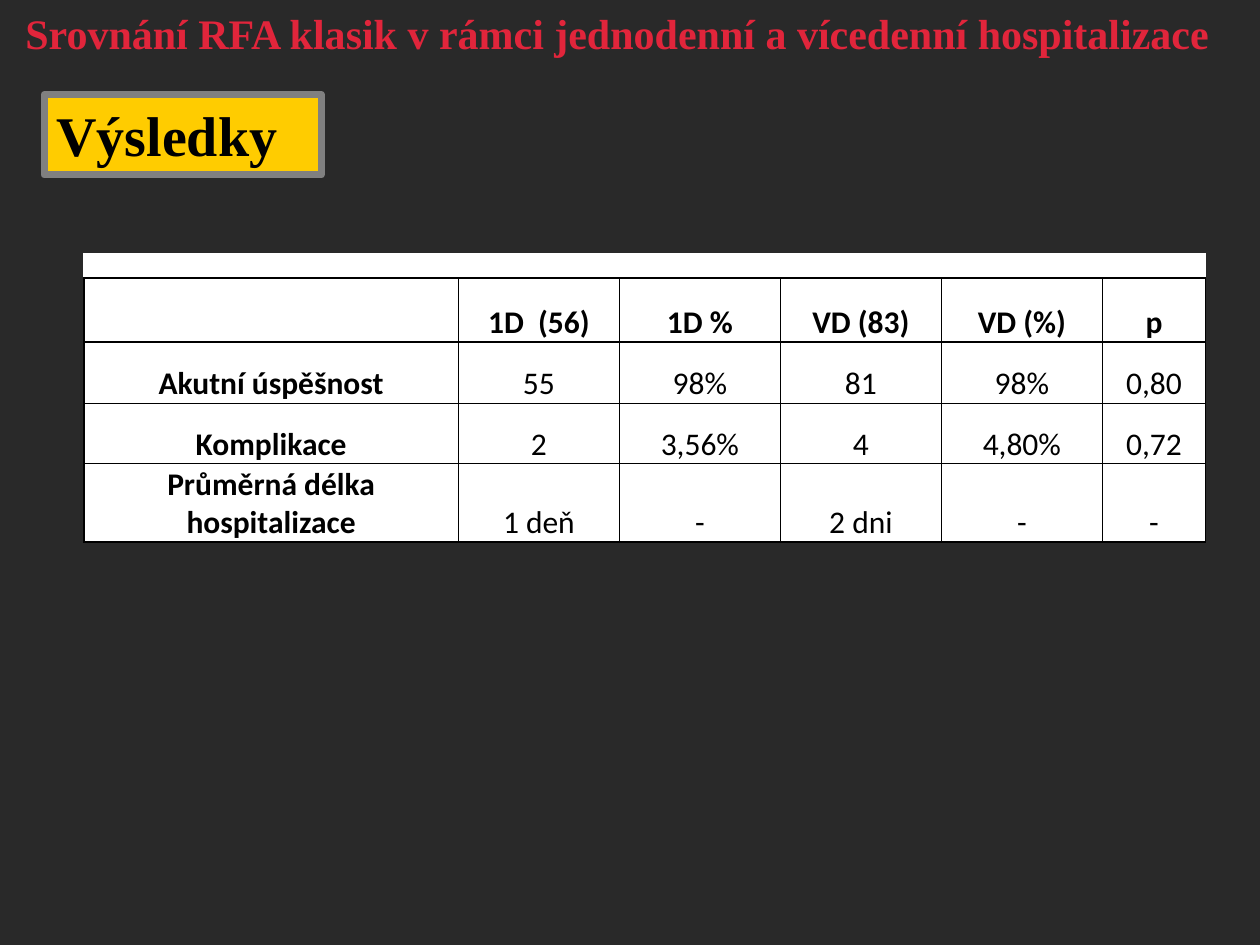
from lxml import etree
from pptx import Presentation
from pptx.dml.color import RGBColor
from pptx.enum.shapes import MSO_SHAPE
from pptx.enum.text import MSO_ANCHOR, PP_ALIGN
from pptx.oxml.ns import qn
from pptx.util import Pt

RECTANGLE = MSO_SHAPE.RECTANGLE
TOP, BOTTOM = MSO_ANCHOR.TOP, MSO_ANCHOR.BOTTOM
LEFT, CENTER = PP_ALIGN.LEFT, PP_ALIGN.CENTER

COLORS = {
    "background": "292929",
    "title": "E1253B",
    "label": "FFCC00",
    "frame": "808080",
    "text": "000000",
    "cell": "FFFFFF",
}
TITLE = "Srovnání RFA klasik v rámci jednodenní a vícedenní hospitalizace "
RESULTS = [
    [""] * 6,
    ["", "1D  (56)", "1D %", "VD (83)", "VD (%)", "p"],
    ["Akutní úspěšnost", "55", "98%", "81", "98%", "0,80"],
    ["Komplikace", "2", "3,56%", "4", "4,80%", "0,72"],
    ["Průměrná délka hospitalizace", "1 deň", "-", "2 dni", "-", "-"],
]
COLUMN_WIDTHS = [214] + [92] * 4 + [59]
ROW_HEIGHTS = [13.7, 36.6, 34.8, 34.8, 44]
SPACER_SIZE = 8


class SlideBuilder:
    """Hold the style and the current slide, and draw each kind of element."""

    heading_font = "Times New Roman"
    table_font = "Calibri"

    def __init__(self, presentation):
        self.slide = presentation.slides.add_slide(presentation.slide_layouts[6])
        self.fill(self.slide.background.fill, "background")

    def fill(self, fill, color):
        fill.solid()
        fill.fore_color.rgb = RGBColor.from_string(COLORS[color])

    def add_text(self, frame, text, color, alignment=LEFT, space_before=0, **font):
        paragraph = frame.paragraphs[0]
        paragraph.alignment = alignment
        paragraph.space_before = Pt(space_before)
        run = paragraph.add_run()
        run.text = text
        run.font.color.rgb = RGBColor.from_string(COLORS[color])
        for name, value in font.items():
            setattr(run.font, name, value)

    def title(self, text, left, top, width, height):
        box = self.slide.shapes.add_textbox(Pt(left), Pt(top), Pt(width), Pt(height))
        box.text_frame.word_wrap = True
        self.add_text(box.text_frame, text, "title", CENTER,
                      name=self.heading_font, size=Pt(24), bold=True)

    def label(self, text, left, top, width, height):
        shape = self.slide.shapes.add_shape(
            RECTANGLE, Pt(left), Pt(top), Pt(width), Pt(height))
        shape.shadow.inherit = False
        self.fill(shape.fill, "label")
        self.fill(shape.line.fill, "frame")
        shape.line.width = Pt(4)
        shape.text_frame.vertical_anchor = TOP
        self.add_text(shape.text_frame, text, "text", space_before=4,
                      name=self.heading_font, size=Pt(32), bold=True)

    def border(self, cell, side, width):
        properties = cell._tc.get_or_add_tcPr()
        line = etree.SubElement(properties, qn(f"a:ln{side}"), w=str(Pt(width)))
        solid = etree.SubElement(line, qn("a:solidFill"))
        etree.SubElement(solid, qn("a:srgbClr"), val=COLORS["text"])

    def cell(self, cell, text, bold, borders):
        for side, width in borders.items():
            self.border(cell, side, width)
        self.fill(cell.fill, "cell")
        margins = {"margin_left": 0.7, "margin_right": 0.7,
                   "margin_top": 0.7, "margin_bottom": 0}
        for name, value in margins.items():
            setattr(cell, name, Pt(value))
        cell.vertical_anchor = BOTTOM
        if text:
            self.add_text(cell.text_frame, text, "text", CENTER,
                          name=self.table_font, size=Pt(18), bold=bold)
        else:
            paragraph = cell.text_frame.paragraphs[0]
            etree.SubElement(paragraph._p, qn("a:endParaRPr"),
                             sz=str(SPACER_SIZE * 100))

    def table(self, rows, left, top, widths, heights):
        row_count, column_count = len(heights), len(widths)
        table = self.slide.shapes.add_table(
            row_count, column_count, Pt(left), Pt(top),
            Pt(sum(widths)), Pt(sum(heights))).table
        table.first_row = table.horz_banding = False
        for column, width in zip(table.columns, widths):
            column.width = Pt(width)
        for row, height in zip(table.rows, heights):
            row.height = Pt(height)
        for r, texts in enumerate(rows):
            vertical = [1 if c in (0, column_count) or (c == 1 and r > 1) else 0.5
                        for c in range(column_count + 1)]
            horizontal = [1 if edge in (1, 2, row_count) else 0.5
                          for edge in (r, r + 1)]
            for c, text in enumerate(texts):
                borders = {"B": horizontal[1]}
                if r:
                    borders = {"L": vertical[c], "R": vertical[c + 1],
                               "T": horizontal[0], "B": horizontal[1]}
                self.cell(table.cell(r, c), text, r == 1 or c == 0, borders)


def main():
    presentation = Presentation()
    presentation.slide_width, presentation.slide_height = Pt(720), Pt(540)
    builder = SlideBuilder(presentation)
    builder.label("Výsledky", 25.2, 54, 158.4, 46)
    builder.table(RESULTS, 48, 145.2, COLUMN_WIDTHS, ROW_HEIGHTS)
    builder.title(TITLE, 0, 0.7, 711.4, 38)
    presentation.save("out.pptx")


if __name__ == "__main__":
    main()
